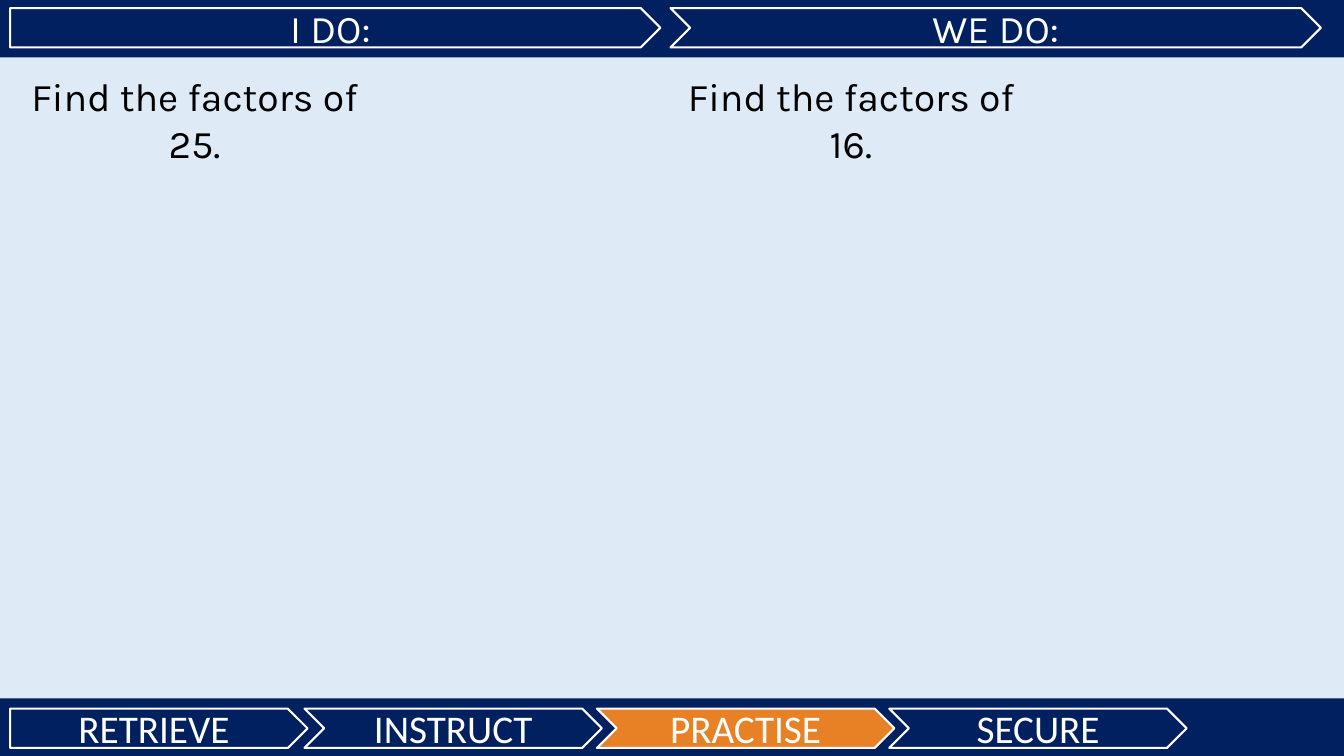
from dataclasses import dataclass

from pptx import Presentation
from pptx.dml.color import RGBColor
from pptx.enum.shapes import MSO_SHAPE
from pptx.enum.text import MSO_ANCHOR, PP_ALIGN
from pptx.shapes.autoshape import Shape
from pptx.slide import Slide
from pptx.util import Inches, Pt

RECTANGLE, PENTAGON, CHEVRON = MSO_SHAPE.RECTANGLE, MSO_SHAPE.PENTAGON, MSO_SHAPE.CHEVRON
CENTER, MIDDLE = PP_ALIGN.CENTER, MSO_ANCHOR.MIDDLE

NAVY = RGBColor(0x00, 0x20, 0x60)
ORANGE = RGBColor(0xE8, 0x81, 0x26)
PALE_BLUE = RGBColor(0xDE, 0xEB, 0xF7)
WHITE = RGBColor(0xFF, 0xFF, 0xFF)
BLACK = RGBColor(0x00, 0x00, 0x00)

# Lengths in inches
SLIDE_WIDTH, SLIDE_HEIGHT = 13.33, 7.5
BAND_HEIGHT = 0.57
ARROW_LEFT, ARROW_HEIGHT = 0.1, 0.39
QUESTION_TOP, QUESTION_WIDTH, QUESTION_PITCH = 0.67, 3.86, 6.51
TEXT_SIZE = Pt(28)


@dataclass(frozen=True)
class ArrowBand:
    """A full-width band holding a row of evenly spaced arrows."""
    band_top: float
    arrow_top: float
    first_chevron: float
    pitch: float
    arrow_width: float
    font_name: str
    labels: tuple[str, ...]
    active_label: str = ""


BANDS = (
    ArrowBand(SLIDE_HEIGHT - BAND_HEIGHT, 7.03, 3.02, 2.9, 2.95, "Calibri",
              ("RETRIEVE", "INSTRUCT", "PRACTISE", "SECURE"), "PRACTISE"),
    ArrowBand(0, 0.08, 6.65, 6.55, 6.45, "Karla", ("I DO:", "WE DO:")),
)
QUESTIONS = ("Find the factors of 25.", "Find the factors of 16.")


def write_text(shape: Shape, text: str, font_name: str, color: RGBColor) -> None:
    shape.text_frame.word_wrap = True
    paragraph = shape.text_frame.paragraphs[0]
    paragraph.text = text
    paragraph.alignment = CENTER
    paragraph.font.name = font_name
    paragraph.font.size = TEXT_SIZE
    paragraph.font.color.rgb = color


def add_filled_shape(slide: Slide, kind: MSO_SHAPE, left: float, top: float,
                     width: float, height: float, fill: RGBColor) -> Shape:
    shape = slide.shapes.add_shape(kind, Inches(left), Inches(top),
                                   Inches(width), Inches(height))
    shape.shadow.inherit = False
    shape.fill.solid()
    shape.fill.fore_color.rgb = fill
    shape.line.fill.background()
    return shape


def add_arrow_band(slide: Slide, band: ArrowBand) -> None:
    add_filled_shape(slide, RECTANGLE, 0, band.band_top, SLIDE_WIDTH, BAND_HEIGHT, NAVY)
    for index, label in enumerate(band.labels):
        kind = CHEVRON if index else PENTAGON
        left = band.first_chevron + (index - 1) * band.pitch if index else ARROW_LEFT
        fill = ORANGE if label == band.active_label else NAVY
        arrow = add_filled_shape(slide, kind, left, band.arrow_top,
                                 band.arrow_width, ARROW_HEIGHT, fill)
        arrow.line.color.rgb = WHITE
        arrow.line.width = Pt(1.5)
        arrow.text_frame.vertical_anchor = MIDDLE
        write_text(arrow, label, band.font_name, WHITE)


def add_question(slide: Slide, column: int, text: str) -> None:
    box = slide.shapes.add_textbox(Inches(column * QUESTION_PITCH), Inches(QUESTION_TOP),
                                   Inches(QUESTION_WIDTH), Inches(BAND_HEIGHT))
    write_text(box, text, "Karla", BLACK)


def main() -> None:
    presentation = Presentation()
    presentation.slide_width = Inches(SLIDE_WIDTH)
    presentation.slide_height = Inches(SLIDE_HEIGHT)
    slide = presentation.slides.add_slide(presentation.slide_layouts[6])
    slide.background.fill.solid()
    slide.background.fill.fore_color.rgb = PALE_BLUE

    # Lesson stages below, teaching steps above
    for band in BANDS:
        add_arrow_band(slide, band)

    # One question per column
    for column, question in enumerate(QUESTIONS):
        add_question(slide, column, question)

    presentation.save("out.pptx")


if __name__ == "__main__":
    main()
